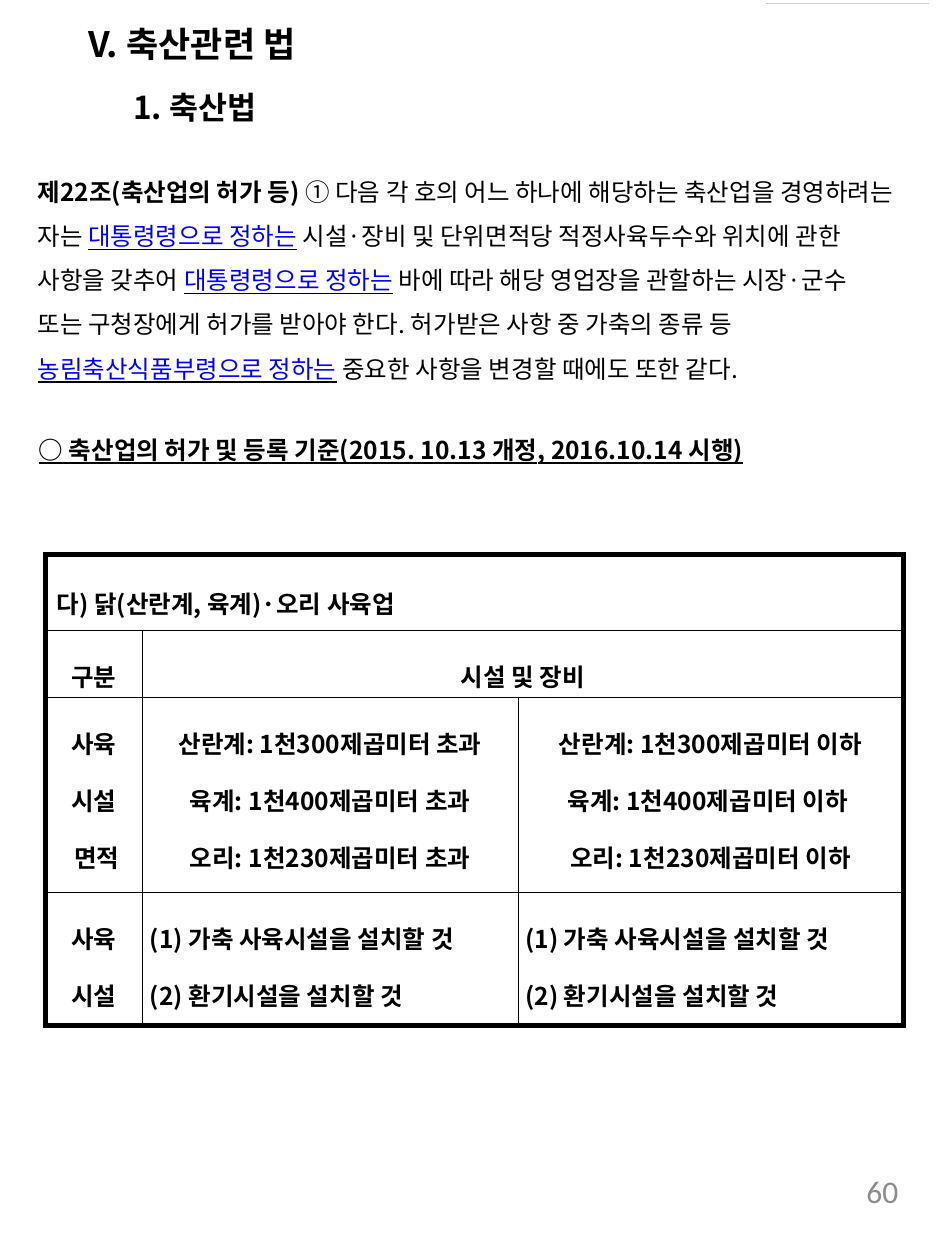
from lxml import etree
from pptx import Presentation
from pptx.dml.color import RGBColor
from pptx.enum.shapes import MSO_CONNECTOR
from pptx.enum.text import MSO_ANCHOR, PP_ALIGN as AL
from pptx.oxml.ns import qn
from pptx.util import Inches, Pt

KO = "Noto Sans CJK KR"
BLACK, BLUE, WHITE = "000000", "0000FF", "FFFFFF"
THICK, THIN = 3, 0.25

LAW = [
    ("제22조(축산업의 허가 등) ", "bold"),
    ("① 다음 각 호의 어느 하나에 해당하는 축산업을 경영하려는 자는 ", ""),
    ("대통령령으로 정하는", "link"),
    (" 시설·장비 및 단위면적당 적정사육두수와 위치에 관한 사항을 갖추어 ", ""),
    ("대통령령으로 정하는", "link"),
    (" 바에 따라 해당 영업장을 관할하는 시장·군수 또는 구청장에게 "
     "허가를 받아야 한다. 허가받은 사항 중 가축의 종류 등 ", ""),
    ("농림축산식품부령으로 정하는", "link"),
    (" 중요한 사항을 변경할 때에도 또한 같다.", ""),
]
FACILITIES = "(1) 가축 사육시설을 설치할 것\n(2) 환기시설을 설치할 것"
# Each row: height, anchor, cells as (text, alignment, columns spanned)
ROWS = [
    (0.6, MSO_ANCHOR.MIDDLE, [("다) 닭(산란계, 육계)·오리 사육업", AL.JUSTIFY, 3)]),
    (0.53, MSO_ANCHOR.MIDDLE, [("구분", AL.CENTER, 1), ("시설 및 장비", AL.CENTER, 2)]),
    (1.55, MSO_ANCHOR.TOP, [
        ("사육\n시설\n 면적", AL.CENTER, 1),
        ("산란계: 1천300제곱미터 초과\n육계: 1천400제곱미터 초과\n"
         "오리: 1천230제곱미터 초과", AL.CENTER, 1),
        ("산란계: 1천300제곱미터 이하\n육계: 1천400제곱미터 이하 \n"
         "오리: 1천230제곱미터 이하", AL.CENTER, 1)]),
    (1.06, MSO_ANCHOR.TOP, [
        ("사육\n시설", AL.CENTER, 1),
        (FACILITIES, AL.JUSTIFY, 1),
        (FACILITIES, AL.JUSTIFY, 1)]),
]
COLS = [0.77, 2.98, 3.06]


def rgb(value):
    return RGBColor.from_string(value)


def style_run(r, size, color=BLACK, bold=False, underline=False, font=KO):
    f = r.font
    f.size, f.bold, f.underline, f.name = Pt(size), bold, underline, font
    f.color.rgb = rgb(color)
    latin = r._r.rPr.find(qn("a:latin"))
    ea = etree.Element(qn("a:ea"), typeface=font)
    latin.addnext(ea)
    if underline:  # the underline stays black whatever the text colour
        u = etree.Element(qn("a:uFill"))
        solid = etree.SubElement(u, qn("a:solidFill"))
        etree.SubElement(solid, qn("a:srgbClr"), val=BLACK)
        latin.addprevious(u)


def add_text(s, x, y, w, h, text, size, **style):
    tf = s.shapes.add_textbox(Inches(x), Inches(y), Inches(w), Inches(h)).text_frame
    tf.word_wrap = True
    p = tf.paragraphs[0]
    if text:
        p.text = text
        style_run(p.runs[0], size, **style)
    return tf


def set_margins(box, side, top):
    box.margin_left = box.margin_right = Inches(side)
    box.margin_top = box.margin_bottom = Inches(top)


def add_table(s, x, y, widths, heights):
    tb = s.shapes.add_table(len(heights), len(widths), Inches(x), Inches(y),
                            Inches(sum(widths)), Inches(sum(heights))).table
    tb.first_row = tb.horz_banding = False
    for col, w in zip(tb.columns, widths):
        col.width = Inches(w)
    for row, h in zip(tb.rows, heights):
        row.height = Inches(h)
    return tb


def set_borders(cell, left, right, top, bottom):
    tcPr = cell._tc.get_or_add_tcPr()
    for i, (side, width) in enumerate(zip("LRTB", (left, right, top, bottom))):
        ln = etree.Element(qn("a:ln" + side), w=str(Pt(width)))
        solid = etree.SubElement(ln, qn("a:solidFill"))
        etree.SubElement(solid, qn("a:srgbClr"), val=BLACK)
        tcPr.insert(i, ln)


def fill_cell(cell, text, align, anchor):
    cell.text_frame.text = text
    cell.vertical_anchor = anchor
    for p in cell.text_frame.paragraphs:
        p.alignment, p.line_spacing = align, 1.6
        style_run(p.runs[0], 14, bold=True)


def add_title(s):
    cell = add_table(s, 0.63, 0.06, [5.98], [0.54]).cell(0, 0)
    cell.fill.background()
    set_margins(cell, 0.07, 0.07)
    cell.text = "V. 축산관련 법"
    style_run(cell.text_frame.paragraphs[0].runs[0], 20, bold=True)


def add_law(s):
    p = add_text(s, 0.2, 1.24, 7, 2.17, "", 14).paragraphs[0]
    p.line_spacing = 1.5
    for text, kind in LAW:
        r = p.add_run()
        r.text = text
        link = kind == "link"
        style_run(r, 14, BLUE if link else BLACK, kind == "bold", link)


def add_criteria(s):
    tb = add_table(s, 0.36, 4.4, COLS, [row[0] for row in ROWS])
    last_row, last_col = len(ROWS) - 1, len(COLS) - 1
    for i, (_, anchor, cells) in enumerate(ROWS):
        # Thick outer frame, thin inner lines
        for j in range(len(COLS)):
            cell = tb.cell(i, j)
            cell.fill.solid()
            cell.fill.fore_color.rgb = rgb(WHITE)
            set_margins(cell, 0.06, 0.05)
            set_borders(cell, THICK if j == 0 else THIN,
                        THICK if j == last_col else THIN,
                        THICK if i == 0 else THIN,
                        THICK if i == last_row else THIN)
        j = 0
        for text, align, span in cells:
            cell = tb.cell(i, j)
            if span > 1:
                cell.merge(tb.cell(i, j + span - 1))
                set_right = cell._tc.tcPr.find(qn("a:lnR"))
                set_right.set("w", str(Pt(THICK)))
            fill_cell(cell, text, align, anchor)
            j += span
    pPr = tb.cell(0, 0).text_frame.paragraphs[0]._p.get_or_add_pPr()
    pPr.set("marL", str(Inches(0.03)))


def main():
    prs = Presentation()
    prs.slide_width, prs.slide_height = Inches(7.5), Inches(10)
    s = prs.slides.add_slide(prs.slide_layouts[6])

    # Rule at the top edge
    rule = s.shapes.add_connector(MSO_CONNECTOR.STRAIGHT, Inches(6.08), Inches(0.03),
                                  Inches(7.37), Inches(0.03))
    rule.line.color.rgb = rgb("CCCCCC")
    rule.line.width = Pt(0.75)
    etree.SubElement(rule._element.spPr, qn("a:effectLst"))

    # Headings
    tf = add_text(s, 0.96, 0.65, 5.65, 0.4, "1. 축산법", 18, bold=True)
    pPr = tf.paragraphs[0]._p.get_or_add_pPr()
    pPr.set("marL", str(Inches(0.44)))
    pPr.set("indent", str(Inches(-0.44)))
    add_title(s)

    # Article and licensing criteria
    add_law(s)
    add_text(s, 0.21, 3.4, 7.29, 0.34,
             "○ 축산업의 허가 및 등록 기준(2015. 10.13 개정, 2016.10.14 시행)",
             14, bold=True, underline=True)
    add_criteria(s)

    # Page number
    tf = add_text(s, 5.4, 9.3, 1.73, 0.3, "60", 18, color="8C8C8C", font="Calibri")
    set_margins(tf, 0, 0)
    tf.paragraphs[0].alignment = AL.RIGHT

    prs.save("out.pptx")


if __name__ == "__main__":
    main()
